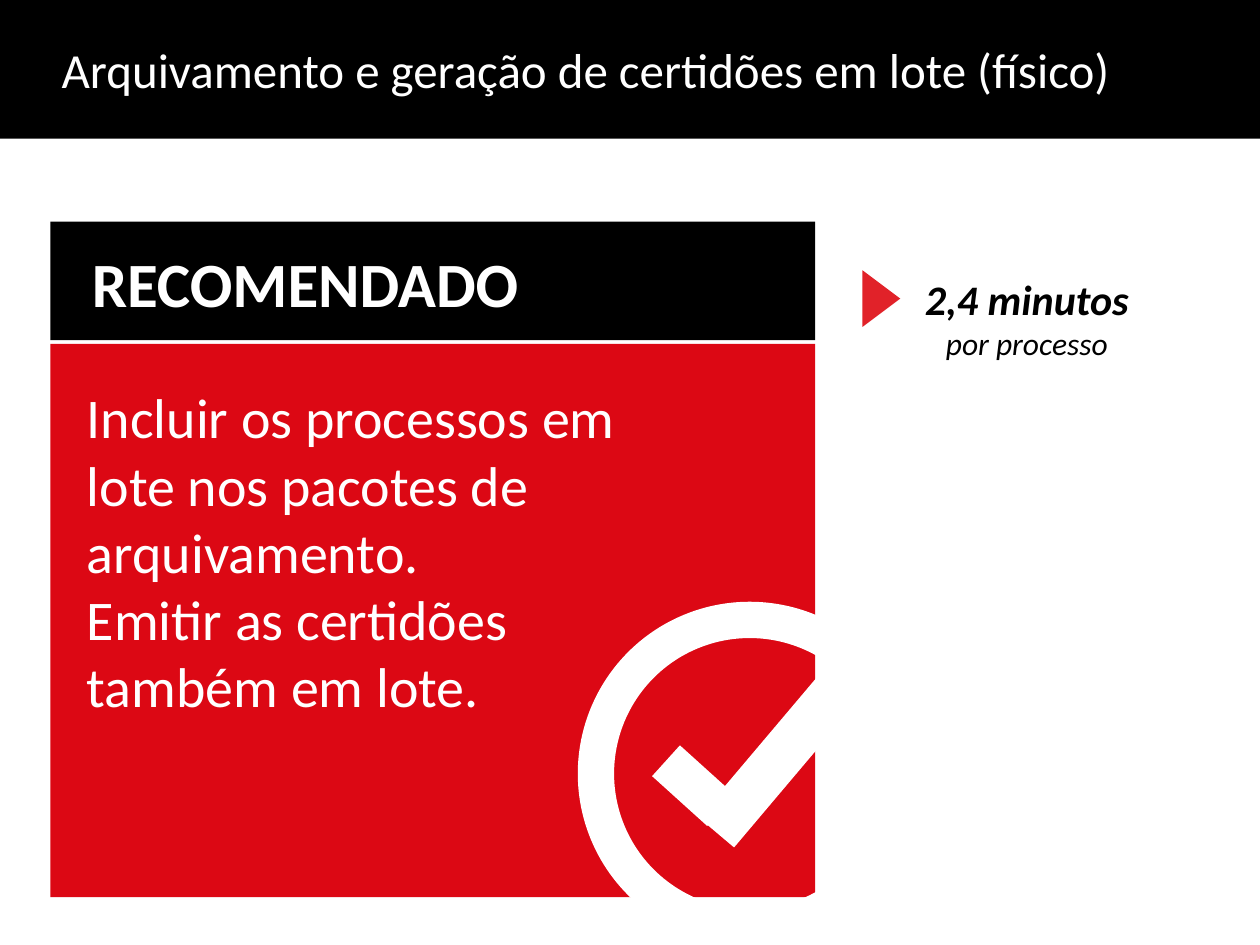
from pptx import Presentation
from pptx.dml.color import RGBColor
from pptx.enum.shapes import MSO_SHAPE as SHAPE
from pptx.enum.text import MSO_ANCHOR as ANCHOR, PP_ALIGN as ALIGN
from pptx.util import Inches, Pt

BLACK, WHITE, RED = "000000", "FFFFFF", "DC0814"

prs = Presentation()
prs.slide_width, prs.slide_height = Inches(10), Inches(7.5)
s = prs.slides.add_slide(prs.slide_layouts[6])


def add_shape(kind, box, fill=None, line=None, rotation=0):
    """Add a flat shape; without a fill only its white or coloured outline shows."""
    sp = s.shapes.add_shape(kind, *[Inches(v) for v in box])
    sp.shadow.inherit = False
    sp.rotation = rotation
    for part, color in ((sp.fill, fill), (sp.line.fill, line)):
        if color:
            part.solid()
            part.fore_color.rgb = RGBColor.from_string(color)
        else:
            part.background()
    return sp


def add_run(p, text, size, color=WHITE, bold=False, italic=False):
    r = p.add_run()
    r.text = text
    r.font.name, r.font.size = "Calibri", Pt(size)
    r.font.bold, r.font.italic = bold, italic
    r.font.color.rgb = RGBColor.from_string(color)


# Recommendation card
add_shape(SHAPE.RECTANGLE, (0.4, 1.76, 6.07, 0.94), BLACK)
add_shape(SHAPE.RECTANGLE, (0.4, 2.73, 6.07, 4.39), RED)
tb = s.shapes.add_textbox(Inches(0.63), Inches(1.89), Inches(5.45), Inches(0.7))
tb.text_frame.word_wrap = True
add_run(tb.text_frame.paragraphs[0], "RECOMENDADO", 36, bold=True)

# Check mark in a ring, running off the card's corner
ring = add_shape(SHAPE.OVAL, (4.73, 4.92, 2.44, 2.44), line=WHITE)
ring.line.width = Pt(20.75)
add_shape(SHAPE.RECTANGLE, (5.34, 5.94, 0.33, 0.59), WHITE, rotation=312.1)
add_shape(SHAPE.RECTANGLE, (6.11, 4.94, 0.37, 1.89), WHITE, rotation=40.2)

# Pointer to the time needed
add_shape(SHAPE.ISOSCELES_TRIANGLE, (6.77, 2.22, 0.45, 0.3), "E12229", rotation=90)

# Card text
tb = s.shapes.add_textbox(Inches(0.59), Inches(2.99), Inches(5.09), Inches(2.79))
tb.text_frame.word_wrap = True
p = tb.text_frame.paragraphs[0]
add_run(p, "Incluir os processos em lote nos pacotes de arquivamento.", 32)
p.add_line_break()
add_run(p, "Emitir as certidões também em lote.", 32)

# Title bar
bar = add_shape(SHAPE.RECTANGLE, (0, 0, 10, 1.1), BLACK)
tf = bar.text_frame
tf.word_wrap = True
tf.vertical_anchor = ANCHOR.MIDDLE
tf.margin_left = Inches(0.49)
p = tf.paragraphs[0]
p.alignment = ALIGN.LEFT
add_run(p, "Arquivamento e geração de certidões em lote (físico)", 28)

# Time per case
tb = s.shapes.add_textbox(Inches(7.23), Inches(2.12), Inches(1.84), Inches(0.81))
tf = tb.text_frame
tf.word_wrap = False
p = tf.paragraphs[0]
p.alignment = ALIGN.CENTER
add_run(p, "2,4 minutos", 24, BLACK, bold=True, italic=True)
p = tf.add_paragraph()
p.alignment = ALIGN.CENTER
add_run(p, "por processo", 18, BLACK, italic=True)

prs.save("out.pptx")
